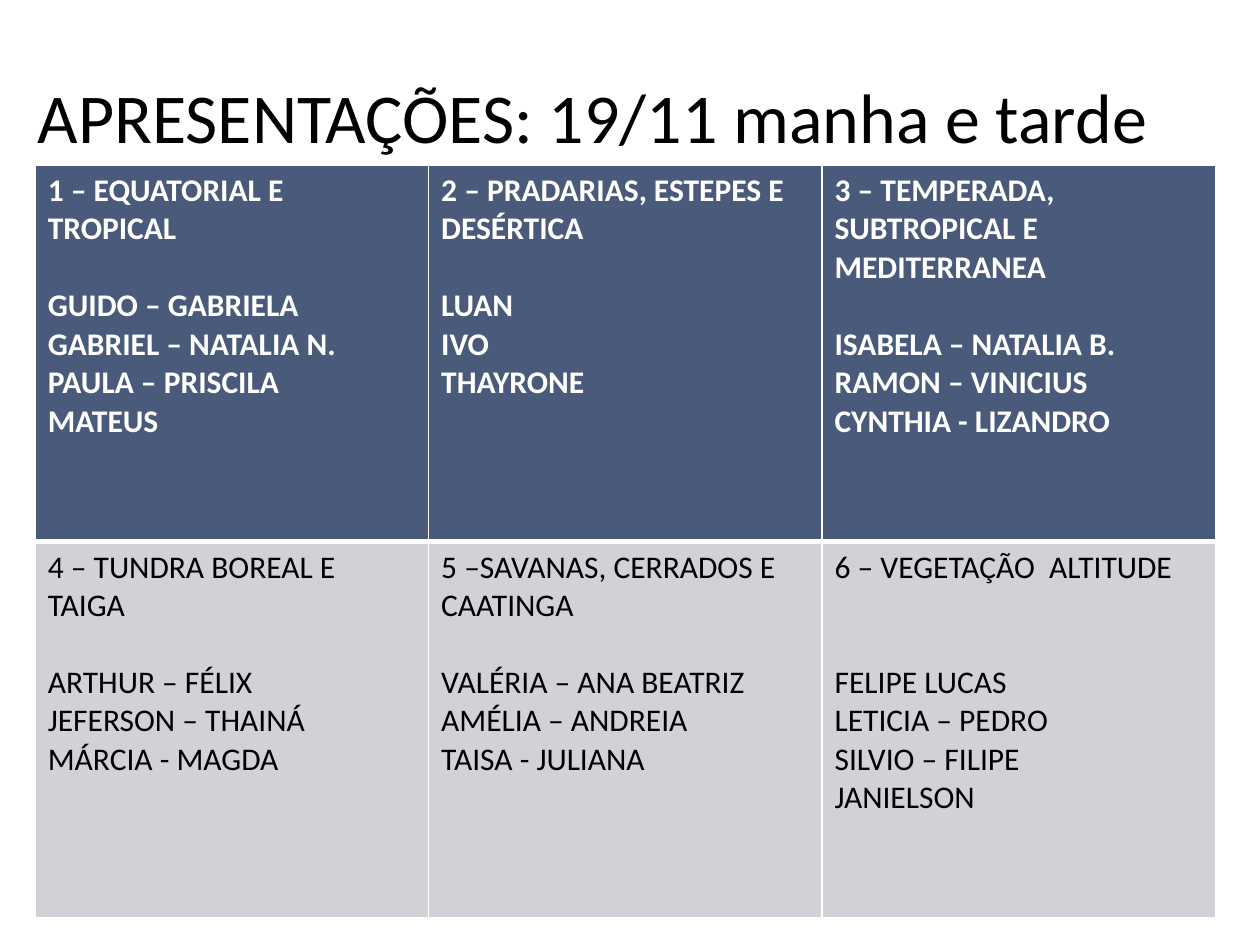
from lxml import etree
from pptx import Presentation
from pptx.dml.color import RGBColor
from pptx.enum.text import MSO_ANCHOR, PP_ALIGN
from pptx.oxml.ns import qn
from pptx.util import Cm, Pt

BOTTOM = MSO_ANCHOR.BOTTOM
LEFT = PP_ALIGN.LEFT

WHITE = RGBColor(0xFF, 0xFF, 0xFF)
BLACK = RGBColor(0, 0, 0)
NAVY = RGBColor(0x4A, 0x5A, 0x7A)
GREY = RGBColor(0xD0, 0xD2, 0xD7)

HEADING = "APRESENTAÇÕES: 19/11 manha e tarde"

# Each group: theme, blank lines after the theme, presenters
GROUP_ROWS = [
    [
        ("1 – EQUATORIAL E TROPICAL", 1,
         ["GUIDO – GABRIELA", "GABRIEL – NATALIA N.", "PAULA – PRISCILA", "MATEUS"]),
        ("2 – PRADARIAS, ESTEPES E DESÉRTICA", 1,
         ["LUAN", "IVO", "THAYRONE"]),
        ("3 – TEMPERADA, SUBTROPICAL E MEDITERRANEA", 1,
         ["ISABELA – NATALIA B.", "RAMON – VINICIUS", "CYNTHIA - LIZANDRO"]),
    ],
    [
        ("4 – TUNDRA BOREAL E TAIGA", 1,
         ["ARTHUR – FÉLIX", "JEFERSON – THAINÁ", "MÁRCIA - MAGDA"]),
        ("5 –SAVANAS, CERRADOS E CAATINGA", 1,
         ["VALÉRIA – ANA BEATRIZ", "AMÉLIA – ANDREIA", "TAISA - JULIANA"]),
        ("6 – VEGETAÇÃO  ALTITUDE", 2,
         ["FELIPE LUCAS", "LETICIA – PEDRO", "SILVIO – FILIPE", "JANIELSON"]),
    ],
]

# Row looks: fill, font attributes, border widths in points
ROW_STYLES = [
    (NAVY, {"size": Pt(18), "bold": True, "name": "Calibri"}, WHITE,
     {"lnL": 1, "lnR": 1, "lnT": 1, "lnB": 3}),
    (GREY, {"size": Pt(18), "bold": False, "name": "Calibri"}, BLACK,
     {"lnL": 1, "lnR": 1, "lnT": 3, "lnB": 1}),
]
TITLE_FONT = {"size": Pt(40), "bold": False, "name": "Calibri"}

LINE_HEIGHT = 22
COLUMN_WIDTH, ROW_HEIGHT = Cm(7.93), Cm(7.59)
TABLE_LEFT, TABLE_TOP = Cm(0.71), Cm(3.33)
TITLE_BOX = {"left": Cm(0.51), "top": Cm(0.33), "width": Cm(24.2), "height": Cm(2.97)}


def set_attributes(target, values):
    for name, value in values.items():
        setattr(target, name, value)


def format_font(font, values, color):
    set_attributes(font, values)
    font.color.rgb = color


def add_borders(cell, widths):
    properties = cell._tc.get_or_add_tcPr()
    for side, width in widths.items():
        line = etree.SubElement(properties, qn(f"a:{side}"), w=str(Pt(width)))
        fill = etree.SubElement(line, qn("a:solidFill"))
        etree.SubElement(fill, qn("a:srgbClr"), val=str(WHITE))


def fill_cell(cell, group, style):
    theme, gap_lines, presenters = group
    fill, font_values, text_color, borders = style
    add_borders(cell, borders)
    cell.fill.solid()
    cell.fill.fore_color.rgb = fill
    frame = cell.text_frame
    frame.text = "\n".join([theme, *presenters])
    frame.paragraphs[1].space_before = Pt(gap_lines * LINE_HEIGHT)
    for paragraph in frame.paragraphs:
        format_font(paragraph.font, font_values, text_color)


def main():
    deck = Presentation()
    deck.slide_width, deck.slide_height = Cm(25.4), Cm(19.05)
    slide = deck.slides.add_slide(deck.slide_layouts[5])

    title = slide.shapes.title
    set_attributes(title, TITLE_BOX)
    title.text_frame.text = HEADING
    title.text_frame.vertical_anchor = BOTTOM
    heading = title.text_frame.paragraphs[0]
    heading.alignment = LEFT
    format_font(heading.font, TITLE_FONT, BLACK)

    row_count, column_count = len(GROUP_ROWS), len(GROUP_ROWS[0])
    groups_table = slide.shapes.add_table(
        row_count, column_count, TABLE_LEFT, TABLE_TOP,
        COLUMN_WIDTH * column_count, ROW_HEIGHT * row_count).table
    groups_table.horz_banding = False
    for column in groups_table.columns:
        column.width = COLUMN_WIDTH
    for row, groups, style in zip(groups_table.rows, GROUP_ROWS, ROW_STYLES):
        row.height = ROW_HEIGHT
        for cell, group in zip(row.cells, groups):
            fill_cell(cell, group, style)

    deck.save("out.pptx")


if __name__ == "__main__":
    main()
